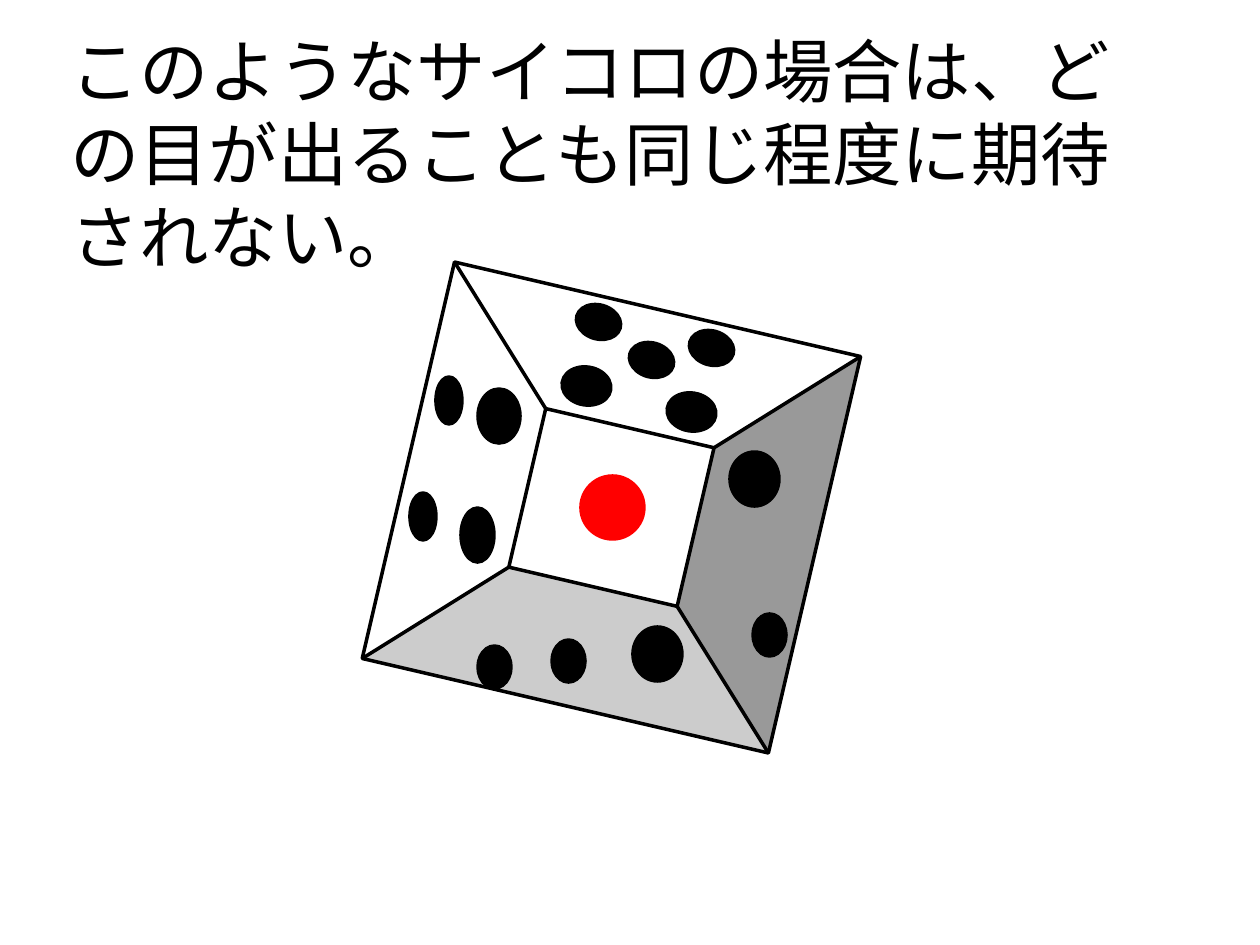
from typing import NamedTuple

from pptx import Presentation
from pptx import util as u
from pptx.dml.color import RGBColor
from pptx.enum import shapes, text

SCALE = 914400 / 126
KIND = shapes.MSO_SHAPE
BLACK, WHITE, RED = "000000", "FFFFFF", "FF0000"


class Pip(NamedTuple):
    x: int
    y: int
    w: int
    h: int
    turn: float = 0
    color: str = BLACK


ONE = [Pip(581, 476, 63, 63, color=RED)]
TWO = [Pip(730, 452, 49, 54), Pip(753, 614, 33, 42)]
THREE = [Pip(478, 646, 33, 42), Pip(552, 640, 33, 42), Pip(633, 627, 49, 54)]
FOUR = [
    Pip(436, 377, 26, 47),
    Pip(478, 389, 42, 54),
    Pip(410, 493, 26, 47),
    Pip(461, 508, 33, 54),
]
FIVE = [
    *(Pip(x, y, 45, 34, 16.3) for x, y in [(576, 305), (629, 343), (689, 331)]),
    *(Pip(x, y, 49, 38, 9) for x, y in [(562, 367), (667, 393)]),
]


def px(n: int) -> u.Emu:
    return u.Emu(round(n * SCALE))


def rgb(code: str) -> RGBColor:
    return RGBColor.from_string(code)


def draw(slide, kind, x: int, y: int, w: int, h: int, turn: float, fill: str, line: str):
    shape = slide.shapes.add_shape(kind, px(x), px(y), px(w), px(h))
    shape.rotation = turn
    shape.shadow.inherit = False
    shape.fill.solid()
    shape.fill.fore_color.rgb = rgb(fill)
    shape.line.color.rgb = rgb(line)
    shape.line.width = u.Pt(2)
    return shape


def write(slide, words: str, *, x: int, y: int, w: int, h: int,
          size: float, font: str, color: str, right: int) -> None:
    frame = slide.shapes.add_textbox(px(x), px(y), px(w), px(h)).text_frame
    frame.word_wrap = True
    frame.vertical_anchor = text.MSO_ANCHOR.TOP
    frame.margin_right = px(right)
    para = frame.paragraphs[0]
    para.alignment = text.PP_ALIGN.LEFT
    run = para.add_run()
    run.text = words
    run.font.size = u.Pt(size)
    run.font.name = font
    run.font.color.rgb = rgb(color)


def main() -> None:
    deck = Presentation()
    deck.slide_width, deck.slide_height = px(1260), px(945)
    slide = deck.slides.add_slide(deck.slide_layouts[6])
    write(slide, "このようなサイコロの場合は、どの目が出ることも同じ程度に期待されない。",
          x=58, y=22, w=1134, h=300, size=39.6, font="Calibri", color=BLACK, right=30)
    die = draw(slide, KIND.BEVEL, 403, 304, 417, 407, 13.1, WHITE, BLACK)
    die.adjustments[0] = 0.3
    for pip in ONE + TWO + THREE + FOUR + FIVE:
        draw(slide, KIND.FLOWCHART_CONNECTOR, pip.x, pip.y, pip.w, pip.h,
             pip.turn, pip.color, pip.color)
    deck.save("out.pptx")


if __name__ == "__main__":
    main()
